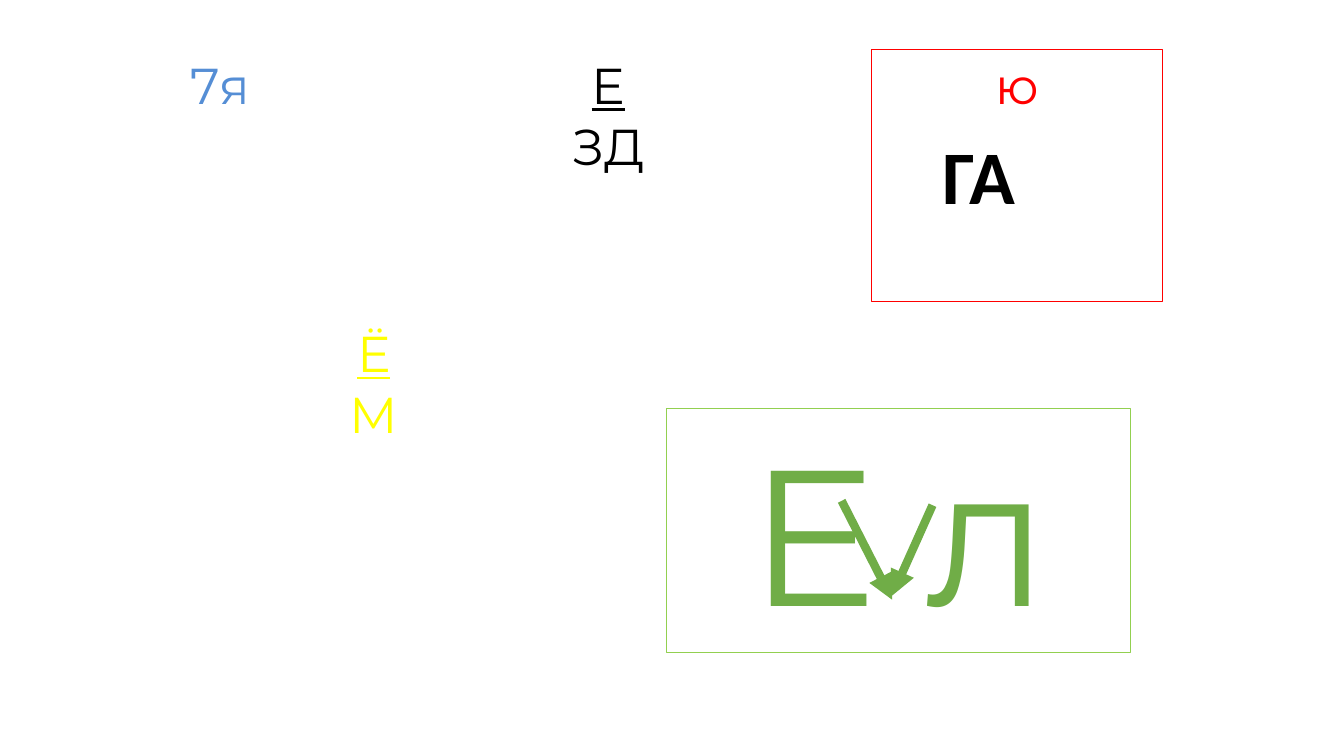
from lxml.etree import SubElement
from pptx import Presentation
from pptx.dml.color import RGBColor
from pptx.enum.shapes import MSO_CONNECTOR, MSO_SHAPE
from pptx.enum.text import MSO_ANCHOR, PP_ALIGN
from pptx.oxml.ns import qn
from pptx.util import Cm, Pt

COLORS = {
    "black": "000000",
    "blue": "558ED5",
    "yellow": "FFFF00",
    "red": "FF0000",
    "lime": "92D050",
    "green": "70AD47",
}


def color(name):
    return RGBColor.from_string(COLORS[name])


def outline_run(run, width):
    """Give the letters a thin black contour line."""
    properties = run.font._element
    line = SubElement(properties, qn("a:ln"), w=str(int(Pt(width))))
    fill = SubElement(line, qn("a:solidFill"))
    SubElement(fill, qn("a:srgbClr"), val=COLORS["black"])
    properties.insert(0, line)


def write_letters(shape, lines, color_name, size=36, font="Montserrat", bold=False,
                  align=PP_ALIGN.CENTER, outline=0.75, wrap=False):
    """Write the lines; with two lines the upper one is underlined."""
    text_frame = shape.text_frame
    text_frame.text = "\n".join(lines)
    text_frame.word_wrap = wrap
    text_frame.vertical_anchor = MSO_ANCHOR.TOP
    for index, paragraph in enumerate(text_frame.paragraphs):
        paragraph.alignment = align
        run = paragraph.runs[0]
        run.font.name = font
        run.font.size = Pt(size)
        run.font.bold = bold
        run.font.underline = index < len(lines) - 1
        run.font.color.rgb = color(color_name)
        if outline:
            outline_run(run, outline)


def add_letters(slide, box, lines, color_name, **style):
    shape = slide.shapes.add_textbox(*map(Cm, box))
    write_letters(shape, lines, color_name, **style)


def add_frame(slide, box, line_color, lines, color_name, **style):
    shape = slide.shapes.add_shape(MSO_SHAPE.RECTANGLE, *map(Cm, box))
    shape.shadow.inherit = False
    shape.fill.background()
    shape.line.color.rgb = color(line_color)
    shape.line.width = Pt(0.75)
    write_letters(shape, lines, color_name, **style)


def add_arrow(slide, start, end):
    arrow = slide.shapes.add_connector(MSO_CONNECTOR.STRAIGHT, *map(Cm, start + end))
    arrow.line.color.rgb = color("green")
    arrow.line.width = Pt(6)
    SubElement(arrow.line._get_or_add_ln(), qn("a:tailEnd"), type="triangle")
    SubElement(arrow._element.spPr, qn("a:effectLst"))


def main():
    presentation = Presentation()
    presentation.slide_width = Cm(33.87)
    presentation.slide_height = Cm(19.05)
    slide = presentation.slides.add_slide(presentation.slide_layouts[6])

    # Letter puzzles without a frame
    add_letters(slide, (2.77, 1.24, 5.56, 5.77), ["7я"], "blue")
    add_letters(slide, (12.17, 1.24, 6.32, 6.76), ["Е", "ЗД"], "black")
    add_letters(slide, (6.35, 8, 6.15, 7.75), ["Ё", "М"], "yellow")

    # Red frame with letters inside
    add_frame(slide, (21.97, 1.24, 7.34, 6.35), "red", ["ю"], "red", outline=1.5)
    add_letters(slide, (23.5, 3.12, 2.36, 2.57), ["ГА"], "black", size=54,
                font="Calibri", bold=True, align=PP_ALIGN.LEFT, outline=None)

    # Green frame, where two arrows form the middle letter
    add_frame(slide, (16.79, 10.29, 11.71, 6.15), "lime", ["Е л"], "green",
              size=138, wrap=True)
    add_arrow(slide, (21.21, 12.62), (22.48, 15.11))
    add_arrow(slide, (23.5, 12.73), (22.48, 15.01))

    presentation.save("out.pptx")


if __name__ == "__main__":
    main()
